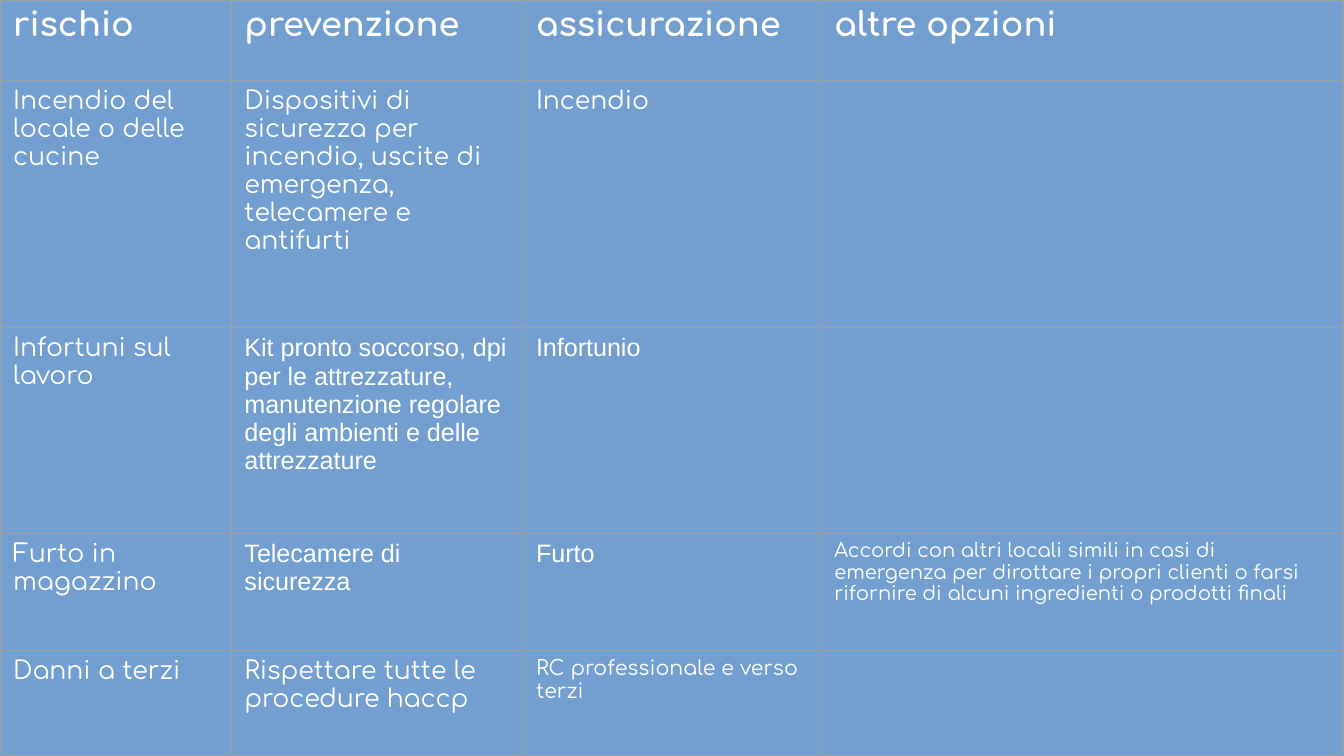
from lxml.etree import SubElement
from pptx import Presentation
from pptx.dml.color import RGBColor as Rgb
from pptx.oxml.ns import qn
from pptx.util import Cm, Pt

HEAD = ["rischio", "prevenzione", "assicurazione", "altre opzioni"]
RISKS = [
    ["Incendio del locale o delle cucine",
     "Dispositivi di sicurezza per incendio, uscite di emergenza, telecamere e antifurti",
     "Incendio", ""],
    ["Infortuni sul lavoro",
     "Kit pronto soccorso, dpi per le attrezzature, manutenzione regolare "
     "degli ambienti e delle attrezzature",
     "Infortunio", ""],
    ["Furto in magazzino", "Telecamere di sicurezza", "Furto",
     "Accordi con altri locali simili in casi di emergenza per dirottare i propri "
     "clienti o farsi rifornire di alcuni ingredienti o prodotti finali"],
    ["Danni a terzi", "Rispettare tutte le procedure haccp",
     "RC professionale e verso terzi", ""],
]
WIDTHS = [4.37, 5.51, 5.64, 9.88]
HEIGHTS = [1.52, 4.67, 3.89, 2.21, 2]
ARIAL = {(2, 1), (2, 2), (3, 1), (3, 2)}
SMALL = {(3, 3): 10.5, (4, 2): 11}


def color(code):
    return Rgb.from_string(code)


def add_edges(cell, code, width):
    props = cell._tc.get_or_add_tcPr()
    for side in ("a:lnL", "a:lnR", "a:lnT", "a:lnB"):
        line = SubElement(props, qn(side), w=str(Pt(width)))
        fill = SubElement(line, qn("a:solidFill"))
        SubElement(fill, qn("a:srgbClr"), val=code)


def style_cell(cell, text, size, face, bold):
    add_edges(cell, "9E9E9E", 0.75)
    cell.fill.solid()
    cell.fill.fore_color.rgb = color("729FCF")
    cell.margin_left = cell.margin_right = Cm(0.25)
    cell.margin_top = cell.margin_bottom = Cm(0.13)
    cell.text_frame.text = text
    font = cell.text_frame.paragraphs[0].font
    for run in cell.text_frame.paragraphs[0].runs:
        font = run.font
    font.size = Pt(size)
    font.name = face
    font.bold = bold
    font.color.rgb = color("FFFFFF")


def add_risks(slide, left, top, width, height):
    rows = [HEAD] + RISKS
    table = slide.shapes.add_table(
        len(rows), len(HEAD), Cm(left), Cm(top), Cm(width), Cm(height)).table
    table.first_row = table.horz_banding = False
    for col, size in zip(table.columns, WIDTHS):
        col.width = Cm(size)
    for row, size in zip(table.rows, HEIGHTS):
        row.height = Cm(size)
    for r, texts in enumerate(rows):
        for c, text in enumerate(texts):
            size = SMALL.get((r, c), 13.5 if r else 18)
            face = "Arial" if (r, c) in ARIAL else "Comfortaa"
            style_cell(table.cell(r, c), text, size, face, r == 0)


def main():
    deck = Presentation()
    deck.slide_width, deck.slide_height = Cm(25.4), Cm(14.29)
    slide = deck.slides.add_slide(deck.slide_layouts[6])
    slide.background.fill.solid()
    slide.background.fill.fore_color.rgb = color("353535")
    add_risks(slide, 0, 0, sum(WIDTHS), sum(HEIGHTS))
    deck.save("out.pptx")


if __name__ == "__main__":
    main()
